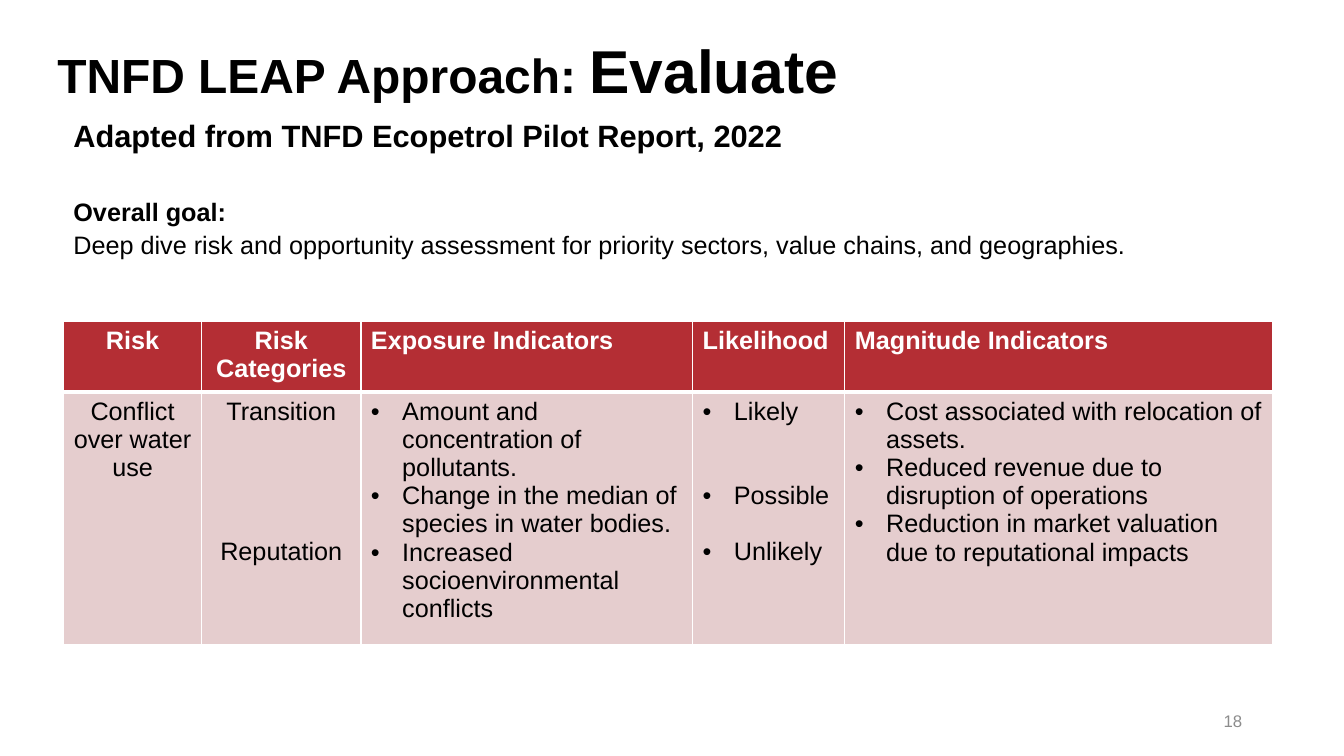
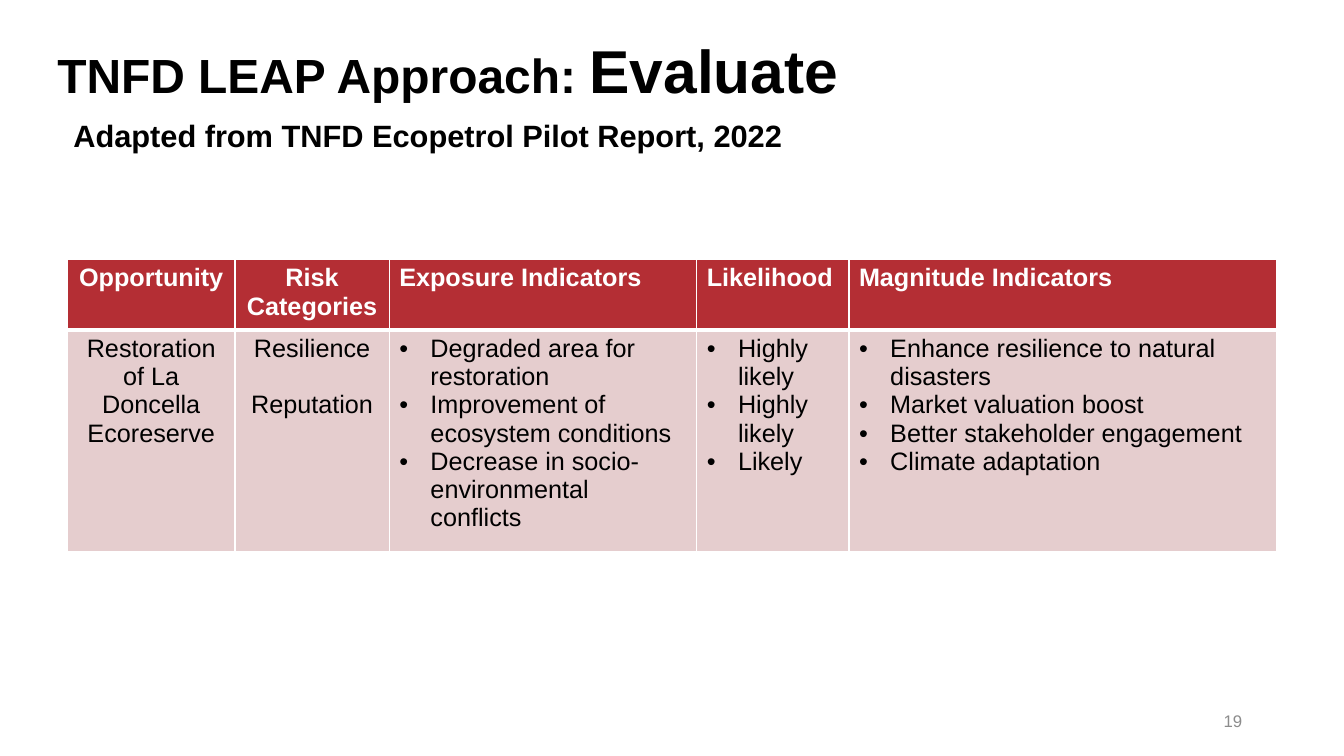
"""Builds two slides that evaluate a risk and an opportunity with the TNFD LEAP approach."""
from lxml import etree
from pptx import Presentation
from pptx.dml.color import RGBColor
from pptx.enum.text import MSO_ANCHOR, PP_ALIGN
from pptx.oxml.ns import qn
from pptx.util import Inches, Pt

LEFT, CENTER, RIGHT = PP_ALIGN.LEFT, PP_ALIGN.CENTER, PP_ALIGN.RIGHT
TOP, MIDDLE, BOTTOM = MSO_ANCHOR.TOP, MSO_ANCHOR.MIDDLE, MSO_ANCHOR.BOTTOM
BLACK, WHITE, GREY = "000000", "FFFFFF", "8C8C8C"
HEADER_RED, BODY_PINK = "B42E34", "E5CDCE"
LINE_HEIGHT = 20.1
INDENT = Inches(0.31)
CENTERED_COLUMNS = 2
HEADER_HEIGHT = 0.7

SLIDES = [
    {
        "number": "18",
        "goal": ["Overall goal:",
                 "Deep dive risk and opportunity assessment for priority sectors, "
                 "value chains, and geographies."],
        "origin": (0.63, 3.19),
        "widths": [1.37, 1.58, 3.29, 1.51, 4.24],
        "body_height": 2.5,
        "subject": "Risk",
        "body": [
            [("Conflict over water use", 0)],
            [("Transition", 0), ("Reputation", 4)],
            [("Amount and concentration of pollutants.", 0),
             ("Change in the median of species in water bodies.", 0),
             ("Increased socioenvironmental conflicts", 0)],
            [("Likely", 0), ("Possible", 2), ("Unlikely", 1)],
            [("Cost associated with relocation of assets.", 0),
             ("Reduced revenue due to disruption of operations", 0),
             ("Reduction in market valuation due to reputational impacts", 0)],
        ],
    },
    {
        "number": "19",
        "goal": [],
        "origin": (0.67, 2.57),
        "widths": [1.66, 1.53, 3.05, 1.51, 4.24],
        "body_height": 2.2,
        "subject": "Opportunity",
        "body": [
            [("Restoration of La Doncella Ecoreserve", 0)],
            [("Resilience", 0), ("Reputation", 1)],
            [("Degraded area for restoration", 0),
             ("Improvement of ecosystem conditions", 0),
             ("Decrease in socio-environmental conflicts", 0)],
            [("Highly likely", 0), ("Highly likely", 0), ("Likely", 0)],
            [("Enhance resilience to natural disasters", 0),
             ("Market valuation boost", 0),
             ("Better stakeholder engagement", 0),
             ("Climate adaptation", 0)],
        ],
    },
]


def style(paragraph, size, color=BLACK, bold=False, align=LEFT):
    """Sets the alignment and font of a paragraph."""
    paragraph.alignment = align
    font = paragraph.font
    font.name, font.size, font.bold = "Arial", Pt(size), bold
    font.color.rgb = RGBColor.from_string(color)


def add_text(slide, box, lines, anchor=TOP):
    """Adds a text box and returns its paragraphs, one for each line."""
    frame = slide.shapes.add_textbox(*[Inches(length) for length in box]).text_frame
    frame.word_wrap = True
    frame.vertical_anchor = anchor
    frame.text = "\n".join(lines)
    return frame.paragraphs


prs = Presentation()
prs.slide_width, prs.slide_height = Inches(13.33), Inches(7.5)

for content in SLIDES:
    slide = prs.slides.add_slide(prs.slide_layouts[6])

    title = add_text(slide, (0.47, 0.3, 9.05, 0.81), ["TNFD LEAP Approach: "], BOTTOM)[0]
    style(title, 34.2, bold=True)
    title.line_spacing = 0.9
    stage = title.add_run()
    stage.text = "Evaluate"
    stage.font.size = Pt(43.2)

    page_number = add_text(slide, (9.42, 6.95, 3, 0.4), [content["number"]], MIDDLE)[0]
    style(page_number, 12, GREY, align=RIGHT)

    credit = add_text(slide, (0.63, 1.11, 8.23, 0.47),
                      ["Adapted from TNFD Ecopetrol Pilot Report, 2022"])[0]
    style(credit, 22, bold=True)

    if content["goal"]:
        heading, goal = add_text(slide, (0.63, 1.9, 11.99, 1.01), content["goal"])
        style(heading, 18, bold=True)
        style(goal, 18)
        goal.space_before = Pt(2)

    left, top = content["origin"]
    widths = content["widths"]
    heights = [HEADER_HEIGHT, content["body_height"]]
    table = slide.shapes.add_table(
        2, len(widths), Inches(left), Inches(top),
        Inches(sum(widths)), Inches(sum(heights))).table
    table.horz_banding = False
    for column, width in zip(table.columns, widths):
        column.width = Inches(width)
    for row, height in zip(table.rows, heights):
        row.height = Inches(height)

    labels = [content["subject"], "Risk Categories", "Exposure Indicators",
              "Likelihood", "Magnitude Indicators"]
    rows = [[[(label, 0)] for label in labels], content["body"]]
    for row_index, row_entries in enumerate(rows):
        is_header = row_index == 0
        for column_index, entries in enumerate(row_entries):
            cell = table.cell(row_index, column_index)
            centered = column_index < CENTERED_COLUMNS

            borders = {"lnL": 1, "lnR": 1, "lnT": 1, "lnB": 1}
            borders["lnB" if is_header else "lnT"] = 3
            for side, points in borders.items():
                line = etree.SubElement(cell._tc.get_or_add_tcPr(), qn(f"a:{side}"),
                                        w=str(Pt(points)))
                line_fill = etree.SubElement(line, qn("a:solidFill"))
                etree.SubElement(line_fill, qn("a:srgbClr"), val=WHITE)
            cell.fill.solid()
            cell.fill.fore_color.rgb = RGBColor.from_string(
                HEADER_RED if is_header else BODY_PINK)

            cell.text_frame.text = "\n".join(text for text, _ in entries)
            for paragraph, (_, gap_lines) in zip(cell.text_frame.paragraphs, entries):
                if gap_lines:
                    paragraph.space_before = Pt(gap_lines * LINE_HEIGHT)
                if not is_header and not centered:
                    properties = paragraph._p.get_or_add_pPr()
                    properties.set("marL", str(INDENT))
                    properties.set("indent", str(-INDENT))
                    etree.SubElement(properties, qn("a:buFont"), typeface="Arial")
                    etree.SubElement(properties, qn("a:buChar"), char="•")
                style(paragraph, 18, WHITE if is_header else BLACK, is_header,
                      CENTER if centered else LEFT)

prs.save("out.pptx")
